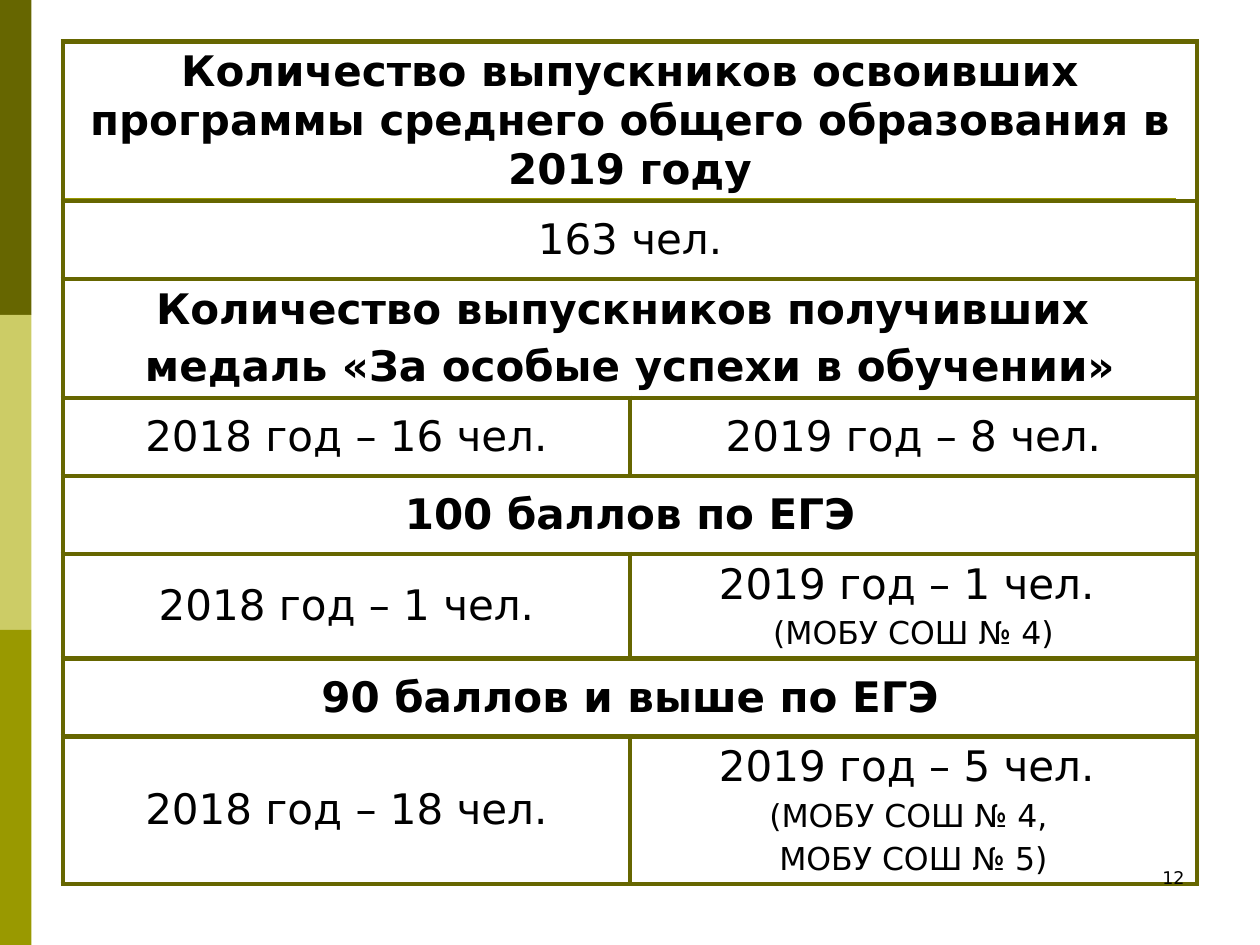
from dataclasses import dataclass

from lxml.etree import SubElement
from pptx import Presentation
from pptx.dml.color import RGBColor
from pptx.enum.shapes import MSO_CONNECTOR, MSO_SHAPE
from pptx.enum.text import MSO_ANCHOR, PP_ALIGN
from pptx.oxml.ns import qn
from pptx.slide import Slide
from pptx.table import _Cell
from pptx.text.text import _Paragraph
from pptx.util import Inches, Pt


@dataclass(frozen=True)
class Theme:
    """Colours, font and type sizes of the slide."""
    dark: str = "666600"
    light: str = "CCCC66"
    olive: str = "999900"
    text: str = "000000"
    font: str = "DejaVu Sans"
    body: int = 24
    note: int = 18
    number: int = 10
    border: float = 3
    rule: float = 1.5


@dataclass(frozen=True)
class Entry:
    """One table cell: main lines, smaller notes and weight."""
    lines: tuple[str, ...]
    notes: tuple[str, ...] = ()
    bold: bool = False


THEME = Theme()
WIDTH, HEIGHT = Inches(10), Inches(7.5)
MARGIN = WIDTH // 20
ROW_HEIGHT = Inches(0.62)

ROWS: tuple[tuple[Entry, ...], ...] = (
    (Entry(("Количество выпускников освоивших программы среднего общего образования в 2019 году",), bold=True),),
    (Entry(("163 чел.",)),),
    (Entry(("Количество выпускников получивших ", "медаль «За особые успехи в обучении»"), bold=True),),
    (Entry(("2018 год – 16 чел.",)), Entry(("2019 год – 8 чел.",))),
    (Entry(("100 баллов по ЕГЭ",), bold=True),),
    (Entry(("2018 год – 1 чел.",)), Entry(("2019 год – 1 чел. ",), ("(МОБУ СОШ № 4)",))),
    (Entry(("90 баллов и выше по ЕГЭ",), bold=True),),
    (Entry(("2018 год – 18 чел.",)), Entry(("2019 год – 5 чел. ",), ("(МОБУ СОШ № 4, ", "МОБУ СОШ № 5)"))),
)


def format_paragraph(paragraph: _Paragraph, size: int, alignment: PP_ALIGN, bold: bool = False) -> None:
    """Set the font and alignment of a paragraph."""
    paragraph.alignment = alignment
    font = paragraph.font
    font.name, font.size, font.bold = THEME.font, Pt(size), bold
    font.color.rgb = RGBColor.from_string(THEME.text)


def space_before(paragraph: _Paragraph, percent: int) -> None:
    """Set the space before a paragraph as a share of its line."""
    paragraph.space_before = Pt(0)
    spacing = paragraph._p.pPr.find(qn("a:spcBef"))
    spacing.remove(spacing[0])
    SubElement(spacing, qn("a:spcPct"), val=str(percent * 1000))


def format_cell(cell: _Cell) -> None:
    """Give a cell its borders and no fill."""
    properties = cell._tc.get_or_add_tcPr()
    for side in ("a:lnL", "a:lnR", "a:lnT", "a:lnB"):
        line = SubElement(properties, qn(side), w=str(Pt(THEME.border)))
        SubElement(SubElement(line, qn("a:solidFill")), qn("a:srgbClr"), val=THEME.dark)
    cell.fill.background()
    cell.vertical_anchor = MSO_ANCHOR.MIDDLE
    cell.margin_left = cell.margin_right = Inches(0.1)
    cell.margin_top = cell.margin_bottom = Inches(0.05)


def write_entry(cell: _Cell, entry: Entry) -> None:
    """Write the lines and notes of an entry into a cell."""
    cell.text = "\n".join(entry.lines + entry.notes)
    for index, paragraph in enumerate(cell.text_frame.paragraphs):
        size = THEME.body if index < len(entry.lines) else THEME.note
        format_paragraph(paragraph, size, PP_ALIGN.CENTER, entry.bold)
        space_before(paragraph, 20)


def draw_stripes(slide: Slide) -> None:
    """Draw the three equal bands down the left edge."""
    band = HEIGHT // 3
    for index, color in enumerate((THEME.dark, THEME.light, THEME.olive)):
        shape = slide.shapes.add_shape(MSO_SHAPE.RECTANGLE, 0, index * band, WIDTH // 40, band)
        shape.shadow.inherit = False
        shape.fill.solid()
        shape.fill.fore_color.rgb = RGBColor.from_string(color)
        shape.line.fill.background()


def draw_rule(slide: Slide) -> None:
    """Draw the thin rule under the heading area."""
    top = Inches(1.58)
    rule = slide.shapes.add_connector(MSO_CONNECTOR.STRAIGHT, MARGIN, top, Inches(9.33), top)
    rule.line.color.rgb = RGBColor.from_string(THEME.olive)
    rule.line.width = Pt(THEME.rule)
    SubElement(rule._element.spPr, qn("a:effectLst"))


def draw_table(slide: Slide) -> None:
    """Draw the results table, merging rows that hold one entry."""
    frame = slide.shapes.add_table(
        len(ROWS), 2, MARGIN, Inches(0.33), WIDTH - 2 * MARGIN, ROW_HEIGHT * len(ROWS))
    frame.height = Inches(6.85)
    table = frame.table
    table.first_row = table.horz_banding = False
    for cell in table.iter_cells():
        format_cell(cell)
    for row, entries in enumerate(ROWS):
        if len(entries) == 1:
            table.cell(row, 0).merge(table.cell(row, 1))
        for column, entry in enumerate(entries):
            write_entry(table.cell(row, column), entry)


def draw_slide_number(slide: Slide) -> None:
    """Write the slide number at the lower right."""
    width = Inches(2.33)
    box = slide.shapes.add_textbox(WIDTH - MARGIN - width, Inches(6.83), width, Inches(0.5))
    box.text_frame.word_wrap = True
    box.text_frame.text = "12"
    format_paragraph(box.text_frame.paragraphs[0], THEME.number, PP_ALIGN.RIGHT)


def main() -> None:
    """Build and save the presentation."""
    presentation = Presentation()
    presentation.slide_width, presentation.slide_height = WIDTH, HEIGHT
    slide = presentation.slides.add_slide(presentation.slide_layouts[6])
    draw_stripes(slide)
    draw_rule(slide)
    draw_table(slide)
    draw_slide_number(slide)
    presentation.save("out.pptx")


if __name__ == "__main__":
    main()
